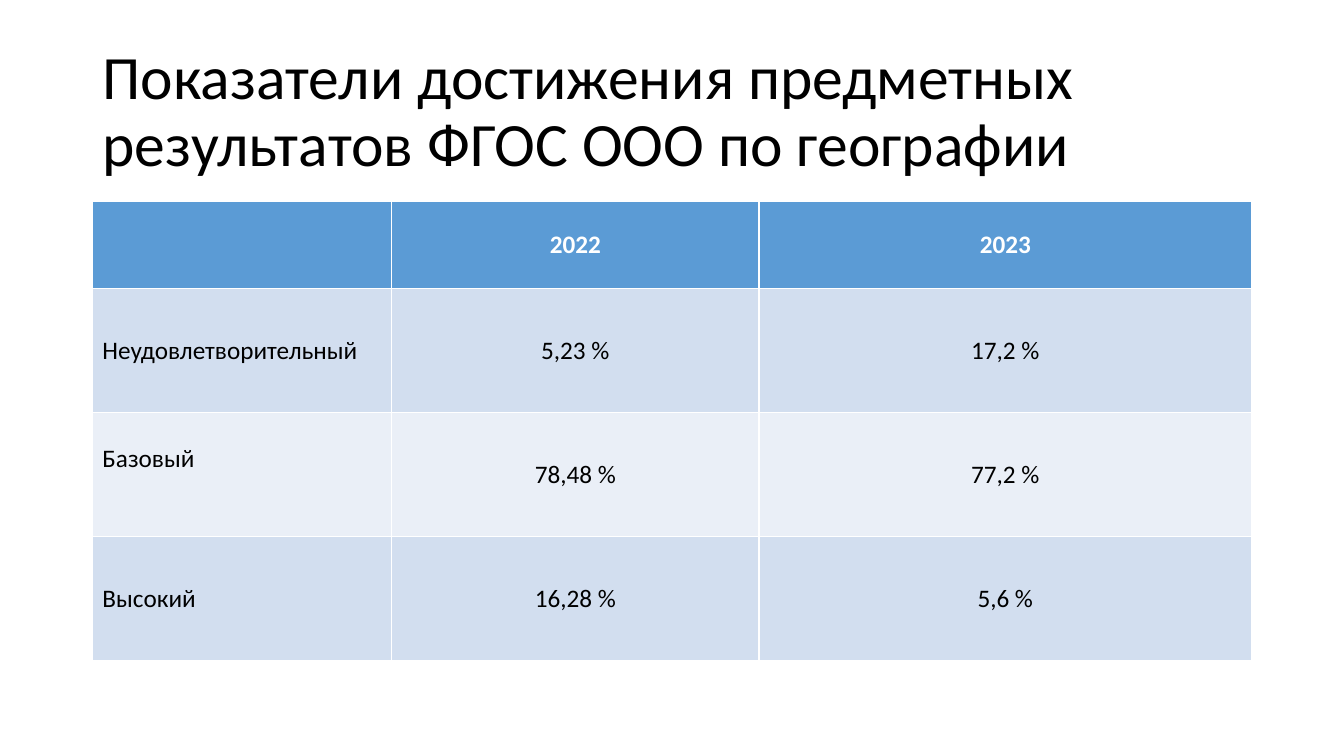
from pptx import Presentation
from pptx.dml.color import RGBColor as Rgb
from pptx.enum.text import MSO_ANCHOR as Anchor, PP_ALIGN as Align
from pptx.util import Emu, Pt

TITLE = "Показатели достижения предметных результатов ФГОС ООО по географии"
ROWS = [
    ("", "2022", "2023"),
    ("Неудовлетворительный", "5,23 %", "17,2 %"),
    ("Базовый", "78,48 %", "77,2 %"),
    ("Высокий", "16,28 %", "5,6 %"),
]
COLORS = {"head": "5B9BD5", "odd": "D2DEEF", "even": "EAEFF7",
          "white": "FFFFFF", "black": "000000"}
FONT = "Calibri"
WIDTHS = (285, 350, 469)
HEIGHTS = (83, 118, 118, 118)
LEFT, TOP = 88, 192
RAISED, LIFT = (2, 0), 34


def px(n):
    return Emu(n * 9525)


def style(para, size, color, align, bold=False):
    para.alignment = align
    for run in para.runs:
        font = run.font
        font.name, font.size, font.bold = FONT, Pt(size), bold
        font.color.rgb = Rgb.from_string(COLORS[color])


def add_title(slide):
    title = slide.shapes.title
    title.left, title.top = px(LEFT), px(38)
    title.width, title.height = px(sum(WIDTHS)), px(139)
    frame = title.text_frame
    frame.text = TITLE
    frame.word_wrap = True
    frame.vertical_anchor = Anchor.MIDDLE
    para = frame.paragraphs[0]
    para.line_spacing = 0.9
    style(para, 44, "black", Align.LEFT)


def add_grid(slide):
    table = slide.shapes.add_table(
        len(ROWS), len(WIDTHS), px(LEFT), px(TOP),
        px(sum(WIDTHS)), px(sum(HEIGHTS))).table
    for col, width in zip(table.columns, WIDTHS):
        col.width = px(width)
    for r, (row, height) in enumerate(zip(ROWS, HEIGHTS)):
        table.rows[r].height = px(height)
        head = r == 0
        fill = "head" if head else "odd" if r % 2 else "even"
        for c, text in enumerate(row):
            cell = table.cell(r, c)
            cell.fill.solid()
            cell.fill.fore_color.rgb = Rgb.from_string(COLORS[fill])
            cell.vertical_anchor = Anchor.MIDDLE
            if (r, c) == RAISED:
                cell.margin_bottom = px(LIFT)
            cell.text_frame.text = text
            style(cell.text_frame.paragraphs[0], 18,
                  "white" if head else "black",
                  Align.CENTER if c else Align.LEFT, head)


def main():
    deck = Presentation()
    deck.slide_width, deck.slide_height = px(1280), px(720)
    slide = deck.slides.add_slide(deck.slide_layouts[5])
    add_title(slide)
    add_grid(slide)
    deck.save("out.pptx")


if __name__ == "__main__":
    main()
